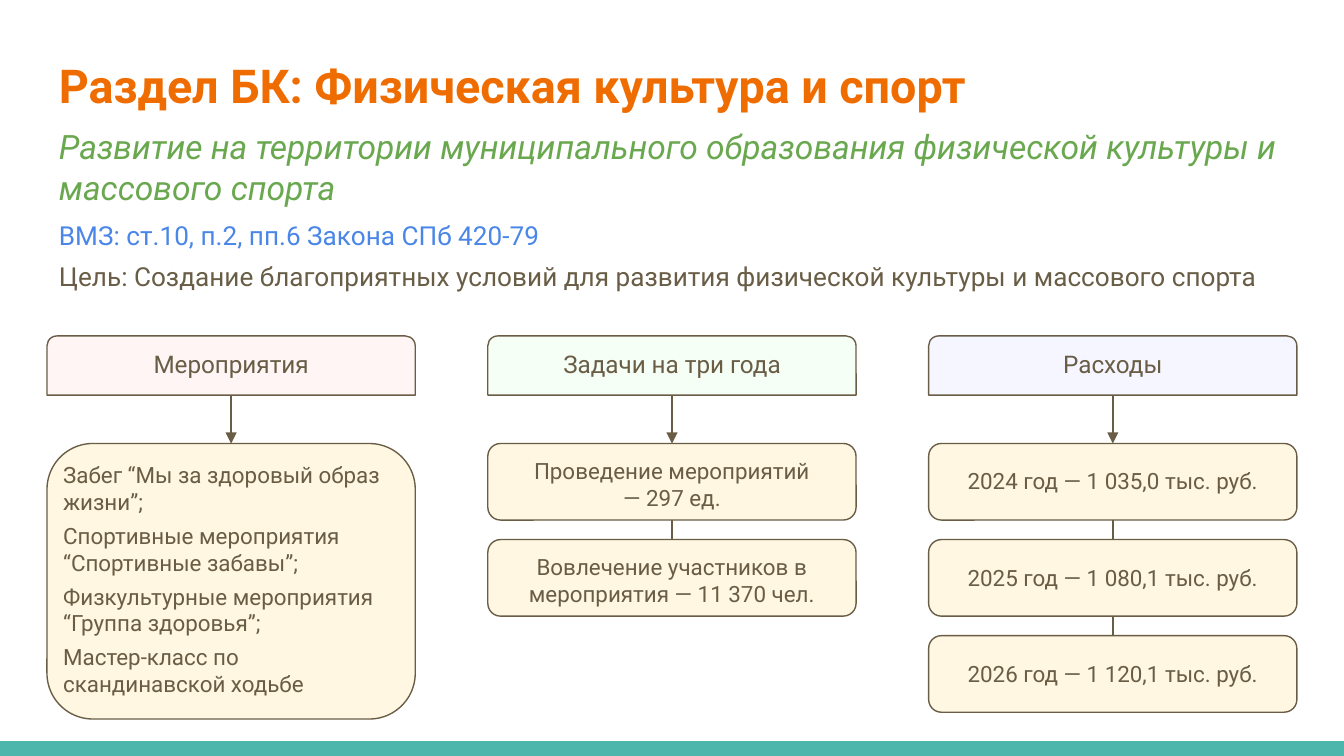
import pptx
import pptx.dml.color
import pptx.enum.shapes
import pptx.enum.text
import pptx.util
from lxml import etree
from pptx.oxml.ns import qn

Inches = pptx.util.Inches
Pt = pptx.util.Pt
Shape = pptx.enum.shapes.MSO_SHAPE
Align = pptx.enum.text.PP_ALIGN
Anchor = pptx.enum.text.MSO_ANCHOR

WIDTH = 10
HEIGHT = WIDTH * 9 / 16
BAR_HEIGHT = 0.11
HEADING_LEFT, HEADING_WIDTH = 0.34, 9.36
MARGIN, COLUMN_WIDTH, COLUMN_STEP = 0.35, 2.74, 3.28
HEADER_TOP, HEADER_HEIGHT = 2.5, 0.44
ROWS_TOP, LAST_ROW_TOP, ROW_HEIGHT = 3.3, 4.73, 0.57
ROW_STEP = (LAST_ROW_TOP - ROWS_TOP) / 2
LIST_HEIGHT = 2.05
BROWN, CREAM = "695D46", "FFF7E1"

HEADINGS = [
    (0.3, 0.67, "Раздел БК: Физическая культура и спорт", 25, "EF6C00", True, False),
    (0.84, 0.77, "Развитие на территории муниципального образования физической культуры и массового спорта",
     18, "6AA84F", False, True),
    (1.53, 0.44, "ВМЗ: ст.10, п.2, пп.6 Закона СПб 420-79", 14, "4A86E8", False, False),
    (1.84, 0.44, "Цель: Создание благоприятных условий для развития физической культуры и массового спорта",
     14, BROWN, False, False),
]
EVENTS = [
    "Забег “Мы за здоровый образ жизни”;",
    "Спортивные мероприятия “Спортивные забавы”;",
    "Физкультурные мероприятия “Группа здоровья”;",
    "Мастер-класс по скандинавской ходьбе",
]
TASKS = [
    ["Проведение мероприятий", "— 297 ед."],
    ["Вовлечение участников в мероприятия — 11 370 чел."],
]
EXPENSES = [
    ["2024 год — 1 035,0 тыс. руб."],
    ["2025 год — 1 080,1 тыс. руб."],
    ["2026 год — 1 120,1 тыс. руб."],
]


def color(value):
    return pptx.dml.color.RGBColor.from_string(value)


def column_left(column):
    return MARGIN + column * COLUMN_STEP


def row_top(row):
    return ROWS_TOP + row * ROW_STEP


def write(shape, lines, size, ink=BROWN, align=Align.CENTER, anchor=Anchor.MIDDLE,
          insets=(0.1, 0.05, 0.1, 0.05), bold=False, italic=False, gap=0):
    frame = shape.text_frame
    frame.word_wrap = True
    frame.vertical_anchor = anchor
    frame.margin_left, frame.margin_top, frame.margin_right, frame.margin_bottom = map(Inches, insets)
    frame.text = "\n".join(lines)
    for index, paragraph in enumerate(frame.paragraphs):
        paragraph.alignment = align
        paragraph.space_before = Pt(gap if index else 0)
        font = paragraph.font
        font.name, font.size, font.bold, font.italic = "Roboto", Pt(size), bold, italic
        font.color.rgb = color(ink)


def add_heading(slide, top, height, text, size, ink, bold, italic):
    heading = slide.shapes.add_textbox(
        Inches(HEADING_LEFT), Inches(top), Inches(HEADING_WIDTH), Inches(height))
    anchor = Anchor.MIDDLE if bold else Anchor.TOP
    write(heading, [text], size, ink, Align.LEFT, anchor, (0.1,) * 4, bold, italic)


def add_block(slide, kind, left, top, width, height, fill, line=BROWN):
    block = slide.shapes.add_shape(kind, Inches(left), Inches(top), Inches(width), Inches(height))
    block.shadow.inherit = False
    block.fill.solid()
    block.fill.fore_color.rgb = color(fill)
    if line:
        block.line.color.rgb = color(line)
        block.line.width = Pt(0.75)
    else:
        block.line.fill.background()
    return block


def add_link(slide, column, top, bottom, arrow=False):
    center = Inches(column_left(column) + COLUMN_WIDTH / 2)
    link = slide.shapes.add_connector(
        pptx.enum.shapes.MSO_CONNECTOR.STRAIGHT, center, Inches(top), center, Inches(bottom))
    link.line.color.rgb = color(BROWN)
    link.line.width = Pt(0.75)
    if arrow:
        etree.SubElement(link.line._get_or_add_ln(), qn("a:tailEnd"), type="triangle")
    etree.SubElement(link._element.spPr, qn("a:effectLst"))


def add_header(slide, column, title, fill):
    header = add_block(slide, Shape.ROUND_2_SAME_RECTANGLE, column_left(column), HEADER_TOP,
                       COLUMN_WIDTH, HEADER_HEIGHT, fill)
    write(header, [title], 13, insets=(0.1, 0.05, 0.1, 0.09))
    add_link(slide, column, HEADER_TOP + HEADER_HEIGHT, ROWS_TOP, arrow=True)


def add_list(slide, column, items):
    card = add_block(slide, Shape.ROUNDED_RECTANGLE, column_left(column), ROWS_TOP,
                     COLUMN_WIDTH, LIST_HEIGHT, CREAM)
    write(card, items, 12, align=Align.LEFT, insets=(0.02, 0, 0.08, 0.03), gap=3.75)


def add_chain(slide, column, entries, insets):
    for row, lines in enumerate(entries):
        card = add_block(slide, Shape.ROUNDED_RECTANGLE, column_left(column), row_top(row),
                         COLUMN_WIDTH, ROW_HEIGHT, CREAM)
        write(card, lines, 12, insets=insets)
        if row:
            add_link(slide, column, row_top(row - 1) + ROW_HEIGHT, row_top(row))


def main():
    deck = pptx.Presentation()
    deck.slide_width, deck.slide_height = Inches(WIDTH), Inches(HEIGHT)
    slide = deck.slides.add_slide(deck.slide_layouts[6])

    add_block(slide, Shape.RECTANGLE, 0, HEIGHT - BAR_HEIGHT, WIDTH, BAR_HEIGHT, "4DB6AC", line=None)
    for heading in HEADINGS:
        add_heading(slide, *heading)

    add_header(slide, 0, "Мероприятия", "FFF5F5")
    add_list(slide, 0, EVENTS)
    add_header(slide, 1, "Задачи на три года", "F6FFF5")
    add_chain(slide, 1, TASKS, (0.1, 0.06, 0.1, 0.03))
    add_header(slide, 2, "Расходы", "F5F6FF")
    add_chain(slide, 2, EXPENSES, (0.1, 0.05, 0.1, 0.06))

    deck.save("out.pptx")


if __name__ == "__main__":
    main()
